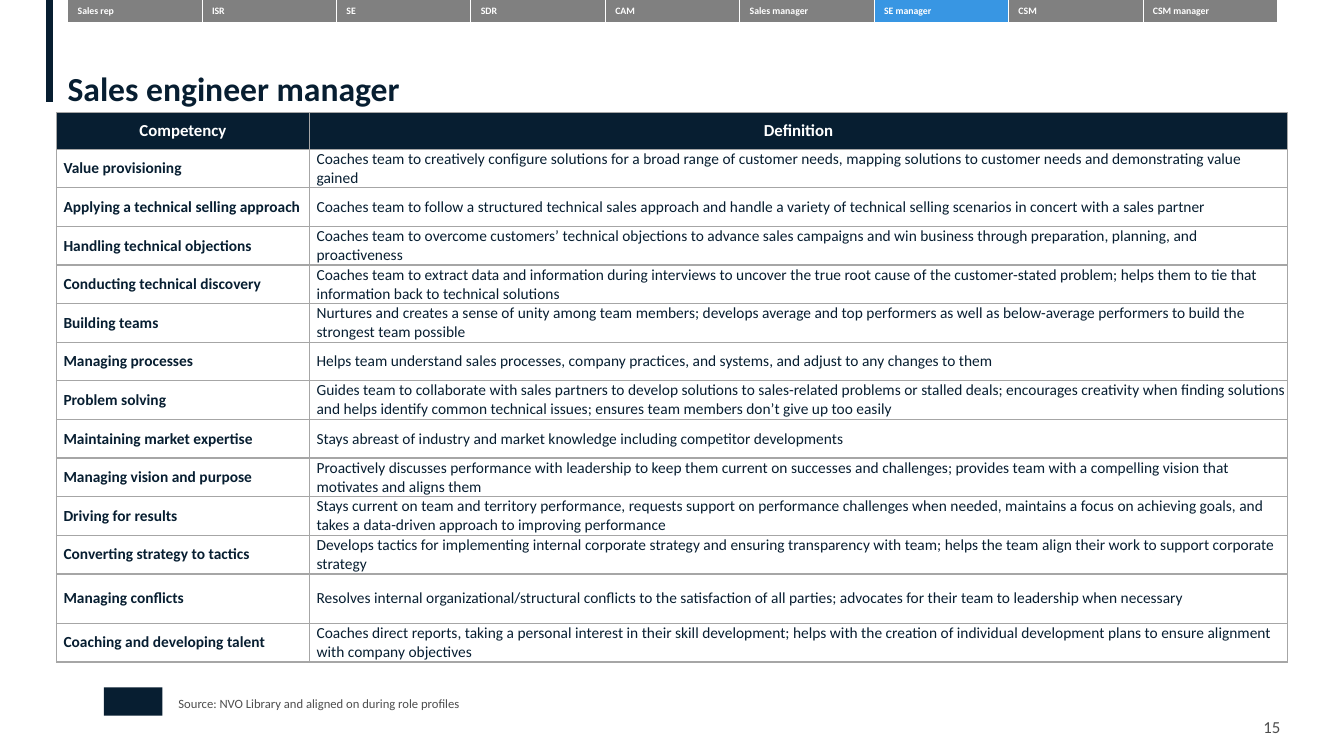
import dataclasses

import pptx
import pptx.dml.color
import pptx.enum.shapes
import pptx.enum.text
import pptx.oxml
import pptx.oxml.ns
import pptx.util
from pptx.util import Inches

ALIGN = pptx.enum.text.PP_ALIGN
ANCHOR = pptx.enum.text.MSO_ANCHOR
NAVY = "071E31"
WHITE = "FFFFFF"
GRAY = "808080"
BLUE = "3896E3"
RULE = "A6A6A6"
INK = "4D4D4D"


@dataclasses.dataclass
class Style:
    size: float
    color: str
    bold: bool = False


@dataclasses.dataclass
class Label:
    text: str
    left: float
    top: float
    width: float
    height: float
    style: Style
    anchor: ANCHOR = ANCHOR.TOP
    spacing: float = 1.0


@dataclasses.dataclass
class Competency:
    name: str
    definition: str
    height: float = (5.45 - 0.36 - 0.49) / 12


ROLES = ["Sales rep", "ISR", "SE", "SDR", "CAM", "Sales manager", "SE manager", "CSM", "CSM manager"]
CURRENT_ROLE = "SE manager"

COMPETENCIES = [
    Competency("Value provisioning", "Coaches team to creatively configure solutions for a broad range of customer needs, mapping solutions to customer needs and demonstrating value gained"),
    Competency("Applying a technical selling approach", "Coaches team to follow a structured technical sales approach and handle a variety of technical selling scenarios in concert with a sales partner"),
    Competency("Handling technical objections", "Coaches team to overcome customers’ technical objections to advance sales campaigns and win business through preparation, planning, and proactiveness"),
    Competency("Conducting technical discovery", "Coaches team to extract data and information during interviews to uncover the true root cause of the customer-stated problem; helps them to tie that information back to technical solutions"),
    Competency("Building teams", "Nurtures and creates a sense of unity among team members; develops average and top performers as well as below-average performers to build the strongest team possible"),
    Competency("Managing processes", "Helps team understand sales processes, company practices, and systems, and adjust to any changes to them"),
    Competency("Problem solving", "Guides team to collaborate with sales partners to develop solutions to sales-related problems or stalled deals; encourages creativity when finding solutions and helps identify common technical issues; ensures team members don’t give up too easily"),
    Competency("Maintaining market expertise", "Stays abreast of industry and market knowledge including competitor developments"),
    Competency("Managing vision and purpose", "Proactively discusses performance with leadership to keep them current on successes and challenges; provides team with a compelling vision that motivates and aligns them"),
    Competency("Driving for results", "Stays current on team and territory performance, requests support on performance challenges when needed, maintains a focus on achieving goals, and takes a data-driven approach to improving performance"),
    Competency("Converting strategy to tactics", "Develops tactics for implementing internal corporate strategy and ensuring transparency with team; helps the team align their work to support corporate strategy"),
    Competency("Managing conflicts", "Resolves internal organizational/structural conflicts to the satisfaction of all parties; advocates for their team to leadership when necessary", 0.49),
    Competency("Coaching and developing talent", "Coaches direct reports, taking a personal interest in their skill development; helps with the creation of individual development plans to ensure alignment with company objectives"),
]

LABELS = [
    Label("Sales engineer manager", 0.67, 0.7, 12.41, 0.38, Style(24, NAVY, True), ANCHOR.BOTTOM, 0.9),
    Label("15", 12.53, 7.11, 0.34, 0.2, Style(12, INK), ANCHOR.MIDDLE),
    Label("Source: NVO Library and aligned on during role profiles", 1.77, 6.9, 6.49, 0.15, Style(9, INK)),
]


def rgb(color: str) -> pptx.dml.color.RGBColor:
    return pptx.dml.color.RGBColor.from_string(color)


def write(frame, text: str, style: Style):
    frame.text = text
    para = frame.paragraphs[0]
    for span in para.runs:
        span.font.name = "Calibri"
        span.font.size = pptx.util.Pt(style.size)
        span.font.bold = style.bold
        span.font.color.rgb = rgb(style.color)
    return para


def clear_margins(item) -> None:
    item.margin_left = item.margin_right = item.margin_top = item.margin_bottom = 0


def add_label(page, label: Label) -> None:
    box = page.shapes.add_textbox(Inches(label.left), Inches(label.top), Inches(label.width), Inches(label.height))
    frame = box.text_frame
    frame.word_wrap = True
    frame.vertical_anchor = label.anchor
    clear_margins(frame)
    write(frame, label.text, label.style).line_spacing = label.spacing


def set_borders(cell, color: str, width: float, sides: str) -> None:
    properties = cell._tc.get_or_add_tcPr()
    namespace = pptx.oxml.ns.nsdecls("a")
    for index, side in enumerate("LRTB"):
        paint = f'<a:solidFill><a:srgbClr val="{color}"/></a:solidFill>' if side in sides else "<a:noFill/>"
        line = f'<a:ln{side} {namespace} w="{pptx.util.Pt(width)}">{paint}</a:ln{side}>'
        properties.insert(index, pptx.oxml.parse_xml(line))


def fill_cell(cell, color: str) -> None:
    cell.fill.solid()
    cell.fill.fore_color.rgb = rgb(color)


def add_grid(page, left: float, top: float, columns: list[float], rows: list[float]):
    table = page.shapes.add_table(
        len(rows), len(columns), Inches(left), Inches(top), Inches(sum(columns)), Inches(sum(rows))
    ).table
    table.first_row = table.horz_banding = False
    for column, width in zip(table.columns, columns):
        column.width = Inches(width)
    for row, height in zip(table.rows, rows):
        row.height = Inches(height)
    return table


def add_competencies(page) -> None:
    heights = [0.36] + [item.height for item in COMPETENCIES]
    table = add_grid(page, 0.56, 1.12, [2.51, 9.7], heights)
    contents = [("Competency", "Definition")] + [(item.name, item.definition) for item in COMPETENCIES]
    for row, texts in enumerate(contents):
        for column, text in enumerate(texts):
            cell = table.cell(row, column)
            clear_margins(cell)
            cell.vertical_anchor = ANCHOR.MIDDLE
            set_borders(cell, RULE, 1, "LRTB")
            if row == 0:
                fill_cell(cell, NAVY)
                write(cell.text_frame, text, Style(12, WHITE, True)).alignment = ALIGN.CENTER
            else:
                cell.fill.background()
                para = write(cell.text_frame, text, Style(11, NAVY, column == 0))
                para._p.get_or_add_pPr().set("marL", str(Inches(0.07)))


def add_role_tabs(page) -> None:
    table = add_grid(page, 0.67, 0, [12 / len(ROLES)] * len(ROLES), [0.22])
    for column, role in enumerate(ROLES):
        cell = table.cell(0, column)
        set_borders(cell, WHITE, 0.5, "LR")
        fill_cell(cell, BLUE if role == CURRENT_ROLE else GRAY)
        write(cell.text_frame, role, Style(7, WHITE, True))


def add_accent(page) -> None:
    accent = page.shapes.add_connector(
        pptx.enum.shapes.MSO_CONNECTOR.STRAIGHT, Inches(0.49), 0, Inches(0.49), Inches(1.01)
    )
    accent.line.color.rgb = rgb(NAVY)
    accent.line.width = pptx.util.Pt(5)
    accent._element.spPr.append(pptx.oxml.parse_xml(f'<a:effectLst {pptx.oxml.ns.nsdecls("a")}/>'))


def add_emblem(page) -> None:
    emblem = page.shapes.add_shape(
        pptx.enum.shapes.MSO_SHAPE.RECTANGLE, Inches(1.03), Inches(6.82), Inches(0.58), Inches(0.28)
    )
    emblem.shadow.inherit = False
    emblem.fill.solid()
    emblem.fill.fore_color.rgb = rgb(NAVY)
    emblem.line.fill.background()


def main() -> None:
    deck = pptx.Presentation()
    deck.slide_width = Inches(13.33)
    deck.slide_height = Inches(7.5)
    page = deck.slides.add_slide(deck.slide_layouts[6])
    add_accent(page)
    add_emblem(page)
    add_competencies(page)
    for label in LABELS:
        add_label(page, label)
    add_role_tabs(page)
    deck.save("out.pptx")


if __name__ == "__main__":
    main()
